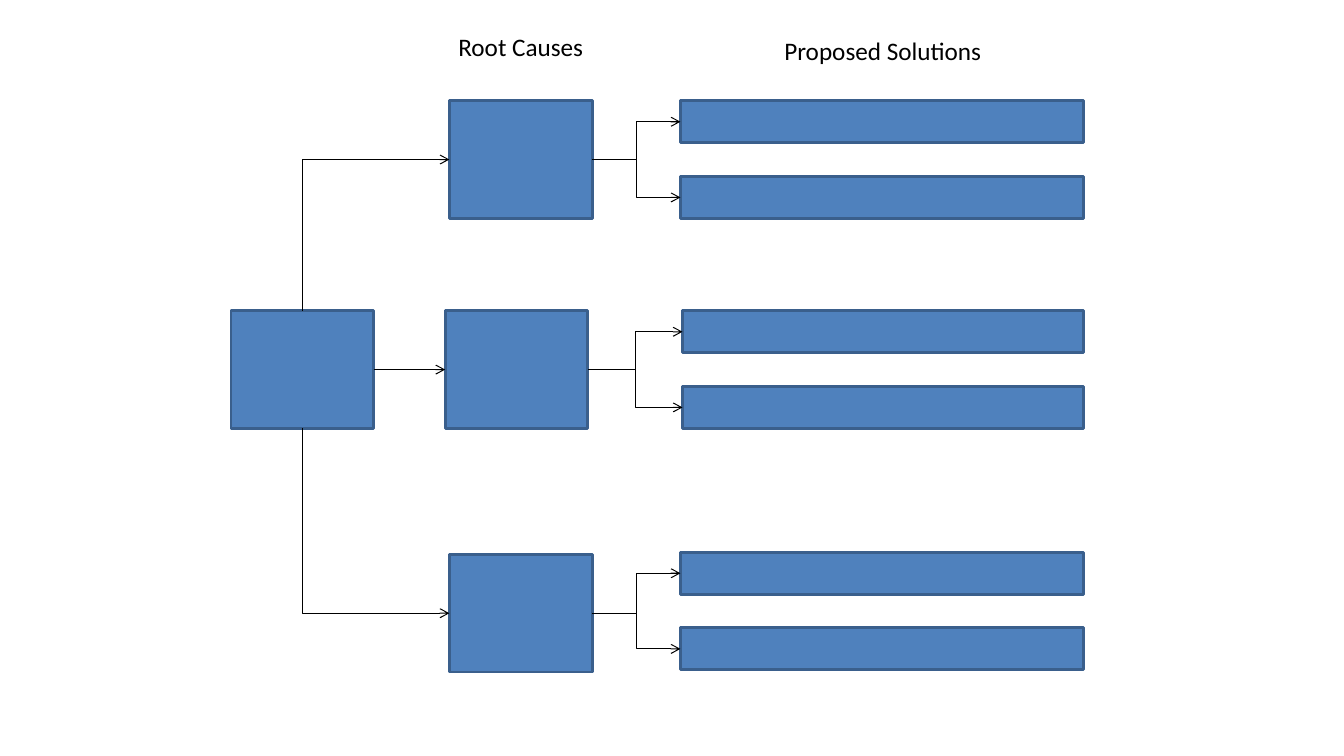
import dataclasses

import pptx
import pptx.dml.color
import pptx.enum.shapes
import pptx.enum.text
import pptx.oxml.ns
import pptx.oxml.xmlchemy
import pptx.util
from lxml import etree

COLUMNS, ROWS = 160, 90
TOP, LEFT, BOTTOM, RIGHT = range(4)  # connection sites of a rectangle


@dataclasses.dataclass(frozen=True)
class Theme:
    fill: str = "4F81BD"
    outline: str = "3A5F8C"
    ink: str = "000000"
    font: str = "Calibri"
    heading_size: float = 18
    outline_width: float = 2
    arrow_width: float = 0.75


class TreePage:
    """Draws on one slide, with lengths in grid columns and rows."""

    def __init__(self, deck, theme):
        self.theme = theme
        self.shapes = deck.slides.add_slide(deck.slide_layouts[6]).shapes
        self.column = deck.slide_width / COLUMNS
        self.row = deck.slide_height / ROWS

    def place(self, left, top, width, height):
        return (round(left * self.column), round(top * self.row),
                round(width * self.column), round(height * self.row))

    def stroke(self, line, color, width):
        line.color.rgb = pptx.dml.color.RGBColor.from_string(color)
        line.width = pptx.util.Pt(width)

    def box(self, left, top, width, height):
        shape = self.shapes.add_shape(
            pptx.enum.shapes.MSO_SHAPE.RECTANGLE,
            *self.place(left, top, width, height))
        shape.shadow.inherit = False
        shape.fill.solid()
        shape.fill.fore_color.rgb = pptx.dml.color.RGBColor.from_string(self.theme.fill)
        self.stroke(shape.line, self.theme.outline, self.theme.outline_width)
        return shape

    def heading(self, words, left, top, width, height):
        box = self.shapes.add_textbox(*self.place(left, top, width, height))
        box.text_frame.word_wrap = True
        box.text_frame.auto_size = pptx.enum.text.MSO_AUTO_SIZE.SHAPE_TO_FIT_TEXT
        para = box.text_frame.paragraphs[0]
        para.alignment = pptx.enum.text.PP_ALIGN.CENTER
        span = para.add_run()
        span.text = words
        span.font.name = self.theme.font
        span.font.size = pptx.util.Pt(self.theme.heading_size)
        span.font.color.rgb = pptx.dml.color.RGBColor.from_string(self.theme.ink)

    def arrow(self, source, target, site=RIGHT):
        """Join a site of the source to the left side of the target."""
        link = self.shapes.add_connector(
            pptx.enum.shapes.MSO_CONNECTOR.ELBOW, 0, 0, 0, 0)
        link.begin_connect(source, site)
        link.end_connect(target, LEFT)
        self.stroke(link.line, self.theme.ink, self.theme.arrow_width)
        properties = link._element.spPr
        name = pptx.oxml.ns.qn
        etree.SubElement(properties.find(name("a:ln")), name("a:tailEnd"), type="arrow")
        etree.SubElement(properties, name("a:effectLst"))
        if site != RIGHT:
            self.turn_corner(link, site)

    def turn_corner(self, link, site):
        """Make the link leave vertically and bend only once."""
        name = pptx.oxml.ns.qn
        properties = link._element.spPr
        properties.find(name("a:prstGeom")).set("prst", "bentConnector2")
        width, height = link.width, link.height
        link.left += (width - height) // 2
        link.top += (height - width) // 2
        link.width, link.height = height, width
        frame = properties.find(name("a:xfrm"))
        frame.set("rot", str((90 if site == TOP else 270) * 60000))
        frame.set("flipH", "1")
        frame.set("flipV", "1" if site == TOP else "0")


def main():
    deck = pptx.Presentation()
    deck.slide_width = pptx.util.Inches(COLUMNS / 12)
    deck.slide_height = pptx.util.Inches(ROWS / 12)
    page = TreePage(deck, Theme())

    page.heading("Root Causes", 53, 3.1, 18, 4.8)
    page.heading("Proposed Solutions", 89.6, 3.6, 31, 4.8)

    cause_width, cause_height = 17, 14
    solution_right, solution_height, solution_step = 129, 5, 9
    problem = page.box(27.5, 37, cause_width, cause_height)

    # cause left, cause top, solution left, first solution top, exit site
    branches = [
        (53.5, 12, 81, 12, TOP),
        (53, 37, 81.25, 37, RIGHT),
        (53.5, 66, 81, 65.75, BOTTOM),
    ]
    for cause_left, cause_top, solution_left, solution_top, site in branches:
        cause = page.box(cause_left, cause_top, cause_width, cause_height)
        page.arrow(problem, cause, site)
        for index in range(2):
            solution = page.box(
                solution_left, solution_top + index * solution_step,
                solution_right - solution_left, solution_height)
            page.arrow(cause, solution)

    deck.save("out.pptx")


if __name__ == "__main__":
    main()
